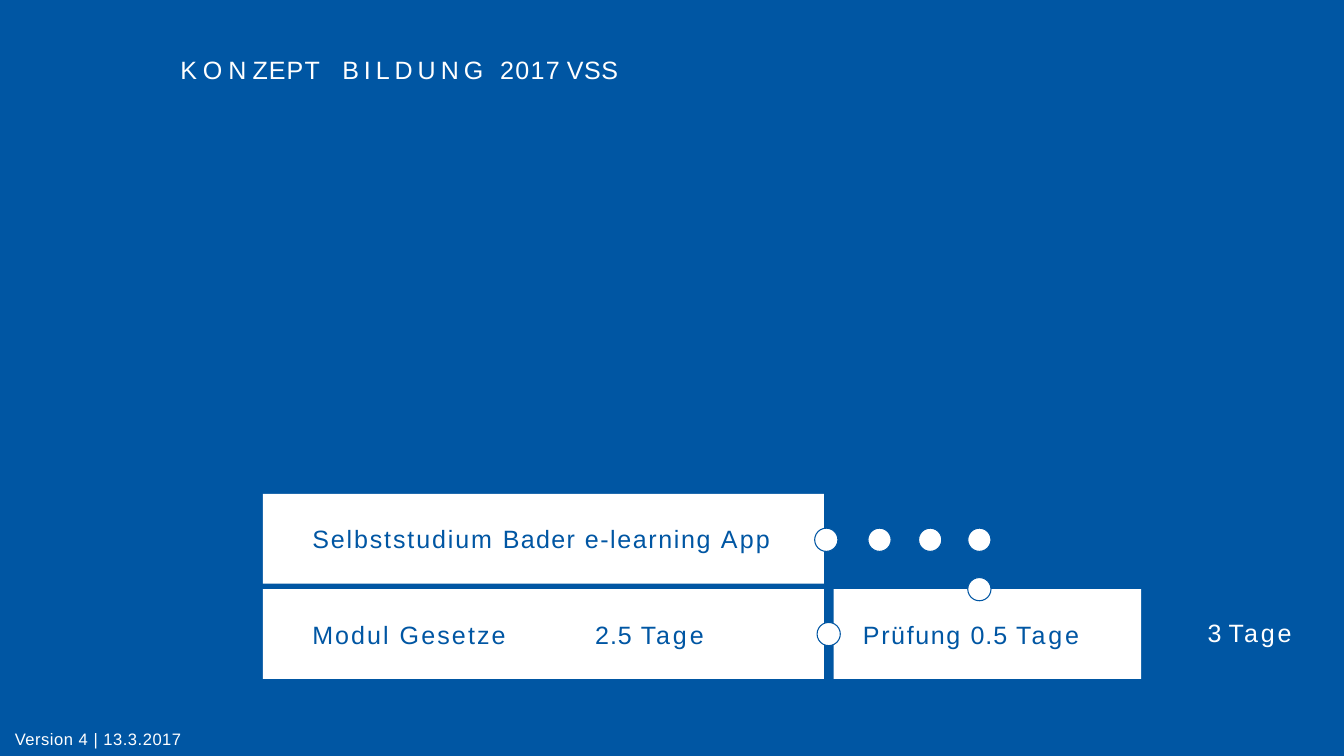
from lxml import etree
from pptx import Presentation
from pptx import util as u
from pptx.dml.color import RGBColor
from pptx.enum import shapes, text
from pptx.oxml.ns import qn

BLUE, WHITE = "0056A3", "FFFFFF"


def color(code):
    return RGBColor.from_string(code)


class Deck:
    """Style and current slide; lengths are percent of the slide's size."""
    font = {"name": "Arial", "bold": False}
    frame = {"margin_left": 0, "margin_top": 0, "margin_right": 0,
             "margin_bottom": 0, "word_wrap": True,
             "auto_size": text.MSO_AUTO_SIZE.NONE}

    def __init__(self, wide, high):
        self.prs = Presentation()
        self.prs.slide_width, self.prs.slide_height = u.Inches(wide), u.Inches(high)
        self.slide = self.prs.slides.add_slide(self.prs.slide_layouts[5])
        fill = self.slide.background.fill
        fill.solid()
        fill.fore_color.rgb = color(BLUE)

    def box(self, x, y, w, h):
        wide, high = self.prs.slide_width, self.prs.slide_height
        return [round(p * side / 100) for p, side in
                ((x, wide), (y, high), (w, wide), (h, high))]

    def line(self, shape, parts, ink, size=29.5, pad=0, tab=None, mid=False):
        """Fill a shape with one line of (text, letter spacing) parts."""
        frame = shape.text_frame
        anchor = text.MSO_ANCHOR.MIDDLE if mid else text.MSO_ANCHOR.TOP
        form = {**self.frame, "margin_left": u.Inches(pad), "vertical_anchor": anchor}
        for key, value in form.items():
            setattr(frame, key, value)
        para = frame.paragraphs[0]
        para.alignment = text.PP_ALIGN.LEFT
        if tab:
            stops = etree.SubElement(para._p.get_or_add_pPr(), qn("a:tabLst"))
            etree.SubElement(stops, qn("a:tab"), pos=str(u.Inches(tab)), algn="l")
        for words, space in parts:
            run = para.add_run()
            run.text = words
            for key, value in {**self.font, "size": u.Pt(size)}.items():
                setattr(run.font, key, value)
            run.font.color.rgb = color(ink)
            run._r.get_or_add_rPr().set("spc", str(round(space * 100)))

    def title(self, area, parts):
        shape = self.slide.shapes.title
        for key, value in zip(("left", "top", "width", "height"), self.box(*area)):
            setattr(shape, key, value)
        self.line(shape, parts, WHITE)

    def label(self, area, parts, **form):
        shape = self.slide.shapes.add_textbox(*self.box(*area))
        self.line(shape, parts, WHITE, **form)

    def shape(self, kind, area):
        shape = self.slide.shapes.add_shape(kind, *area)
        shape.shadow.inherit = False
        shape.fill.solid()
        shape.fill.fore_color.rgb = color(WHITE)
        return shape

    def bar(self, area, parts, **form):
        shape = self.shape(shapes.MSO_SHAPE.RECTANGLE, self.box(*area))
        shape.line.fill.background()
        self.line(shape, parts, BLUE, mid=True, **form)

    def dot(self, x, y, size=0.38):
        left, top, _, _ = self.box(x, y, 0, 0)
        side = u.Inches(size)
        area = left - side // 2, top - side // 2, side, side
        shape = self.shape(shapes.MSO_SHAPE.OVAL, area)
        shape.line.color.rgb = color(BLUE)
        shape.line.width = u.Pt(1.25)


def main():
    deck = Deck(21.99, 12.37)

    # Title
    deck.title((13.42, 7.19, 44.93, 4.04),
               [("KON", 7), ("ZEP", 1.3), ("T ", 9.4), ("BILDUNG ", 5.8),
                ("201", 1.5), ("7 ", 0.1), ("VSS", 0.6)])

    # Course bars
    left, wide, high = 19.55, 41.75, 11.88
    upper, lower = 65.32, 77.93
    days = ("Tage", 3.4)
    deck.bar((left, upper, wide, high),
             [("Selbststudium ", 2.2), ("Bader ", 1.6), ("e-learning ", 1.9),
              ("App", 2.6)], pad=0.81)
    deck.bar((left, lower, wide, high),
             [("Modul ", 2.4), ("Gesetze\t", 2.5), ("2.5 ", 1.1), days],
             pad=0.81, tab=4.63)
    deck.bar((62.03, lower, 22.87, high),
             [("Prüfung ", 1.9), ("0.5 ", 1.1), days], pad=0.48)

    # Total length
    deck.label((89.85, 81.73, 7.91, 4.04), [("3 ", 0.1), days])

    # Dotted path from the app to the exam, and the link below
    turn, level = 72.87, 71.4
    for x in (61.48, 65.44, 69.21, turn):
        deck.dot(x, level)
    deck.dot(turn, lower)
    deck.dot(61.66, lower + high / 2)

    # Version
    deck.label((1.1, 96.44, 28.1, 2.35), [("Version 4 | 13.3.2017", 0.6)], size=19.5)

    deck.prs.save("out.pptx")


if __name__ == "__main__":
    main()
